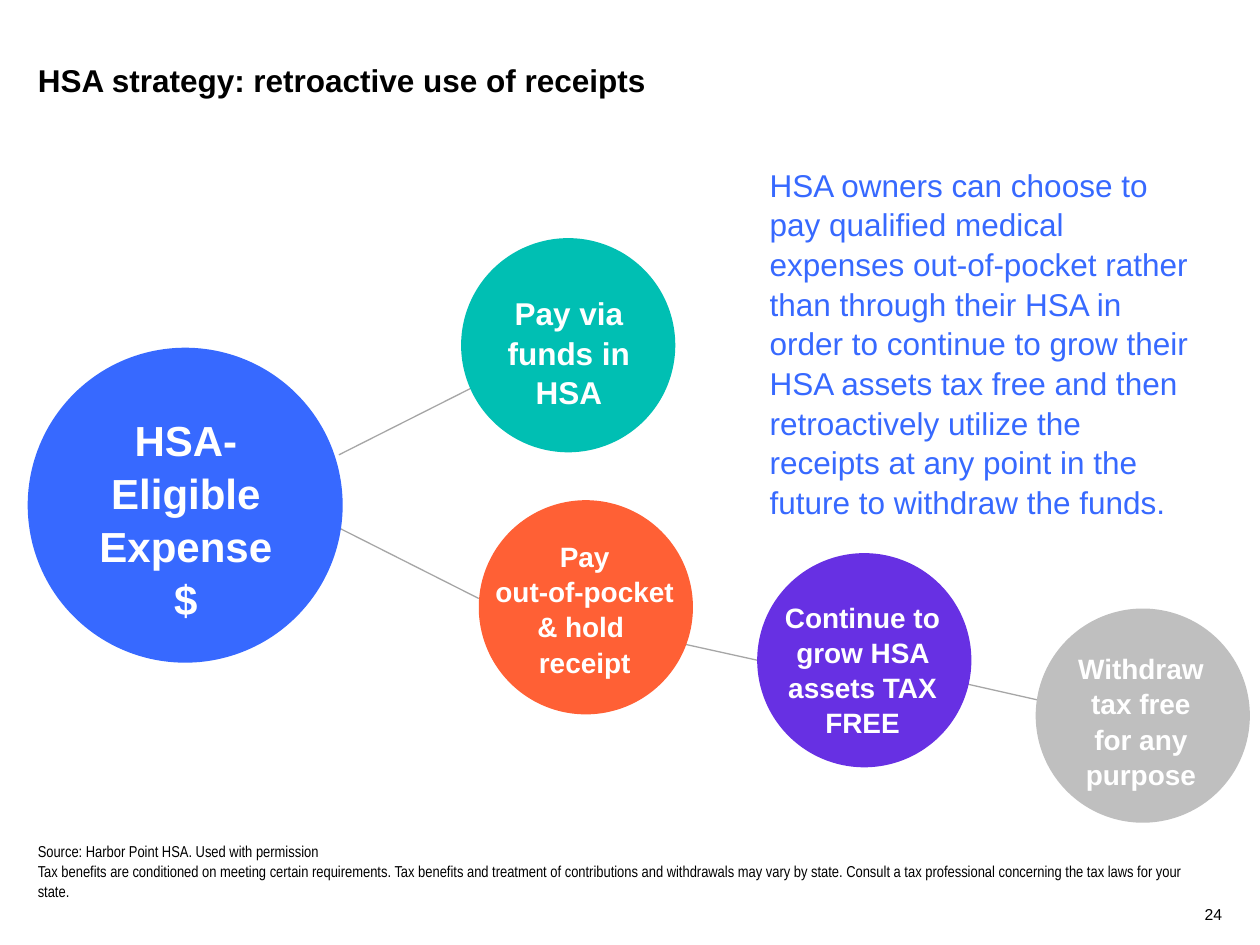
from lxml import etree
from pptx import Presentation
from pptx import util as u
from pptx.dml.color import RGBColor
from pptx.enum import shapes, text
from pptx.oxml.ns import qn

WIDTH, HEIGHT = u.Inches(10), u.Inches(7.5)
COLUMNS, ROWS = 100, 75
BLUE, TEAL, ORANGE, PURPLE, GREY = "3769FF", "00BFB3", "FF6035", "6730E3", "BFBFBF"
LINE_GREY, WHITE, BLACK = "A6A6A6", "FFFFFF", "000000"
SMALL, LARGE = 17, 25  # circle diameters in grid columns
LEFT, CENTER, RIGHT = text.PP_ALIGN.LEFT, text.PP_ALIGN.CENTER, text.PP_ALIGN.RIGHT
TOP, BOTTOM = text.MSO_ANCHOR.TOP, text.MSO_ANCHOR.BOTTOM


def color(hex_value):
    return RGBColor.from_string(hex_value)


def grid(column, row):
    return round(WIDTH * column / COLUMNS), round(HEIGHT * row / ROWS)


class Board:
    """Holds the text style and the slide being drawn."""

    font = "Arial"
    line_spacing = 1.05

    def __init__(self, slide):
        self.slide = slide

    def fill_text(self, frame, lines, size, ink, bold=False, align=LEFT,
                  anchor=TOP, font=None, inset=True):
        frame.word_wrap = True
        frame.auto_size = text.MSO_AUTO_SIZE.NONE
        frame.vertical_anchor = anchor
        if not inset:
            frame.margin_left = frame.margin_right = 0
            frame.margin_top = frame.margin_bottom = 0
        for index, line in enumerate(lines):
            paragraph = frame.paragraphs[0] if index == 0 else frame.add_paragraph()
            paragraph.alignment = align
            paragraph.line_spacing = self.line_spacing
            run = paragraph.add_run()
            run.text = line
            run.font.name = font or self.font
            run.font.size = u.Pt(size)
            run.font.bold = bold
            run.font.color.rgb = color(ink)

    def title(self, line, left, top, width, height):
        heading = self.slide.shapes.title
        heading.left, heading.top = grid(left, top)
        heading.width, heading.height = grid(width, height)
        self.fill_text(heading.text_frame, [line], 18, BLACK, bold=True, inset=False)

    def label(self, lines, left, top, width, height, size, ink, **style):
        box = self.slide.shapes.add_textbox(*grid(left, top), *grid(width, height))
        self.fill_text(box.text_frame, lines, size, ink, **style)

    def circle(self, left, top, diameter, fill):
        oval = self.slide.shapes.add_shape(
            shapes.MSO_SHAPE.OVAL, *grid(left, top), *grid(diameter, diameter))
        oval.shadow.inherit = False
        oval.fill.solid()
        oval.fill.fore_color.rgb = color(fill)
        oval.line.fill.background()

    def link(self, start, end):
        line = self.slide.shapes.add_connector(
            shapes.MSO_CONNECTOR.STRAIGHT, *grid(*start), *grid(*end))
        line.line.color.rgb = color(LINE_GREY)
        line.line.width = u.Pt(0.75)
        etree.SubElement(line._element.spPr, qn("a:effectLst"))


LINKS = [
    ((76.8, 54.3), (83.9, 55.9)),
    ((53.3, 50.9), (60.1, 52.4)),
    ((26.9, 41.9), (38, 47.5)),
    ((26.9, 36.1), (38, 30.5)),
]

# circle (left, top, diameter, fill), label box, text size, label lines
STEPS = [
    ((38, 39.7, SMALL, ORANGE), (37.5, 42.2, 17.8, 11.8), 16,
     ["Pay", "out-of-pocket", "& hold ", "receipt"]),
    ((2.2, 27.6, LARGE, BLUE), (4.8, 32.2, 19.9, 13.1), 24,
     ["HSA-Eligible Expense", "$"]),
    ((36.6, 18.9, SMALL, TEAL), (38, 22.7, 14.3, 10.1), 18,
     ["Pay via funds in HSA"]),
    ((60.1, 43.9, SMALL, PURPLE), (61.2, 47, 14.5, 11.8), 16,
     ["Continue to grow HSA assets TAX FREE"]),
    ((82.2, 48.3, SMALL, GREY), (84.1, 51.1, 12.9, 11.8), 16,
     ["Withdraw tax free for any purpose"]),
]

EXPLANATION = (
    "HSA owners can choose to pay qualified medical expenses out-of-pocket "
    "rather than through their HSA in order to continue to grow their HSA "
    "assets tax free and then retroactively utilize the receipts at any point "
    "in the future to withdraw the funds.")

FOOTNOTES = [
    "Source: Harbor Point HSA. Used with permission",
    "Tax benefits are conditioned on meeting certain requirements. Tax benefits "
    "and treatment of contributions and withdrawals may vary by state. Consult a "
    "tax professional concerning the tax laws for your state.",
]


def main():
    deck = Presentation()
    deck.slide_width, deck.slide_height = WIDTH, HEIGHT
    board = Board(deck.slides.add_slide(deck.slide_layouts.get_by_name("Title Only")))

    board.title("HSA strategy: retroactive use of receipts", 3, 4.7, 70, 7)
    for start, end in LINKS:
        board.link(start, end)
    for circle, box, size, lines in STEPS:
        board.circle(*circle)
        board.label(lines, *box, size, WHITE, bold=True, align=CENTER)
    board.label([EXPLANATION], 60.1, 12.5, 35.6, 28.3, 18, BLUE)
    board.label(FOOTNOTES, 3, 67, 93, 4.5, 9, BLACK,
                font="Arial Narrow", anchor=BOTTOM, inset=False)
    board.label(["24"], 93, 71.5, 4, 1.8, 9, BLACK,
                align=RIGHT, anchor=BOTTOM, inset=False)
    deck.save("out.pptx")


if __name__ == "__main__":
    main()
